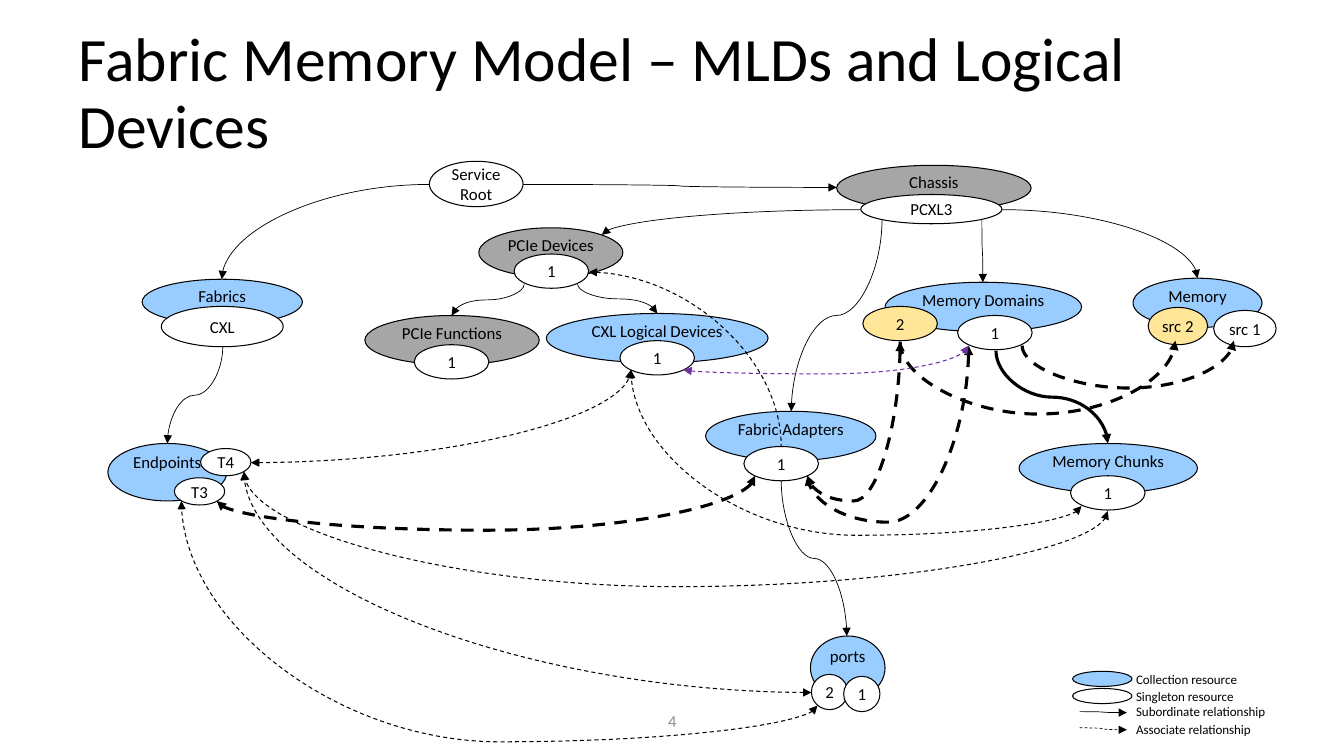
from dataclasses import dataclass
from enum import Enum
from typing import Optional

from lxml.etree import SubElement
from pptx import Presentation
from pptx.dml.color import RGBColor
from pptx.enum.dml import MSO_LINE as Dash
from pptx.enum.shapes import MSO_CONNECTOR as Link, MSO_SHAPE as Preset
from pptx.enum.text import MSO_ANCHOR as Anchor, MSO_AUTO_SIZE as Fit, PP_ALIGN as Align
from pptx.oxml.ns import qn
from pptx.util import Emu, Inches, Pt

CELL = Inches(0.1)


@dataclass(frozen=True)
class Theme:
    font: str = "Calibri"
    ink: str = "000000"
    muted: str = "8C8C8C"
    singleton: str = "FFFFFF"
    collection: str = "99CCFF"
    external: str = "A6A6A6"
    source: str = "FFE699"
    accent: str = "7030A0"
    title: float = 44
    label: float = 12
    legend: float = 9.3
    hair: float = 0.5
    thin: float = 0.75
    bold: float = 2.25


THEME = Theme()


class Route(Enum):
    ACROSS = 1
    DOWN = 2
    CORNER = 3


class Heads(Enum):
    START = ("headEnd",)
    END = ("tailEnd",)
    BOTH = ("headEnd", "tailEnd")


@dataclass(frozen=True)
class Node:
    text: str
    col: float
    row: float
    cols: float = 7.4
    rows: float = 3.4
    fill: str = THEME.singleton
    anchor: Anchor = Anchor.MIDDLE


@dataclass(frozen=True)
class Curve:
    start: tuple[float, float]
    end: tuple[float, float]
    route: Route = Route.DOWN
    bend: Optional[float] = None
    weight: float = THEME.hair
    dashed: bool = False
    heads: Heads = Heads.END
    colour: str = THEME.ink


def group(text: str, col: float, row: float, cols: float, rows: float = 4.9,
          fill: str = THEME.collection) -> Node:
    return Node(text, col, row, cols, rows, fill, Anchor.TOP)


def associate(start: tuple[float, float], end: tuple[float, float], bend: Optional[float] = None,
              weight: float = THEME.thin, heads: Heads = Heads.BOTH,
              route: Route = Route.DOWN, colour: str = THEME.ink) -> Curve:
    return Curve(start, end, route, bend, weight, True, heads, colour)


NODES = [
    Node("Service\nRoot", 42.6, 16, 9.3, 4.5),
    group("Fabrics", 14.1, 27.7, 15.9, 4.5),
    Node("CXL", 16, 30.4, 12.1, 4),
    group("Endpoints", 10.7, 44, 11.8, 5.7),
    Node("T3", 17.3, 47.4, 5, 2.7),
    Node("T4", 19.9, 44.5, 5, 2.7),
    group("Chassis", 83, 16.4, 19.3, 4.5, THEME.external),
    Node("PCXL3", 85.4, 19.3, 14, 2.9),
    group("Memory Chunks", 101.1, 44, 17.7),
    Node("1", 106.2, 47.2),
    group("Fabric Adapters", 70, 40.8, 16.9),
    Node("1", 73.8, 44.3),
    group("Memory Domains", 87.8, 28, 19.5),
    Node("1", 95, 31.3),
    Node("2", 85.6, 30.4, fill=THEME.source),
    group("Memory", 112.4, 27.6, 12.8),
    Node("src 1", 120.4, 30.8, 6.2, 3.6),
    Node("src 2", 113.9, 30.5, 5.9, 3.7, THEME.source),
    group("ports", 80.4, 63.1, 7.4, 6.3),
    Node("2", 80.5, 66.9, 3.6, 3.5),
    Node("1", 83.7, 67.1, 3.6, 3.5),
    group("PCIe Devices", 47.5, 22.6, 14.3, fill=THEME.external),
    Node("1", 51, 25.2),
    group("PCIe Functions", 36.2, 31.3, 17.3, fill=THEME.external),
    Node("1", 41.1, 34.2),
    group("CXL Logical Devices", 54.2, 31.1, 22),
    Node("1", 61.5, 33.8),
    Node("", 106.4, 66.6, 5.9, 1.5, THEME.collection),
    Node("", 106.4, 68.3, 5.9, 1.5),
]

CURVES = [
    Curve((22.1, 34.4), (16.6, 44)),
    Curve((51.9, 18.3), (83, 18.6), Route.ACROSS),
    Curve((42.6, 18.3), (22, 27.7), Route.CORNER),
    Curve((87.5, 21.8), (78.5, 40.8)),
    Curve((98.8, 34.8), (109.9, 44), weight=THEME.bold),
    Curve((99.4, 20.8), (118.8, 27.6), Route.CORNER),
    Curve((97.4, 21.8), (97.5, 28)),
    Curve((77.5, 47.7), (84, 63.1)),
    Curve((57.3, 28.2), (65.2, 31.1)),
    Curve((52, 28.2), (44.8, 31.3)),
    Curve((85.4, 20.8), (59.7, 23.3), Route.CORNER),
    associate((101.4, 34.3), (122.4, 33.8), 38.5, THEME.bold, Heads.END),
    associate((89.3, 33.9), (116.6, 33.8), 41.2, THEME.bold, Heads.END),
    associate((96.1, 34.3), (80.1, 47.2), 51.8, THEME.bold),
    associate((89.3, 33.9), (80.1, 47.2), 49.7, THEME.bold),
    associate((74.9, 47.2), (21.5, 49.7), 52.6, THEME.bold),
    associate((109.9, 50.7), (24.2, 46.8), 58.2),
    associate((81.1, 70), (18, 49.7), 73.6),
    associate((107.3, 50.2), (62.6, 36.7), 53.1),
    associate((67.8, 36.7), (96.1, 34.3), 37.1, colour=THEME.accent),
    associate((24.9, 45.9), (62.6, 36.7), route=Route.CORNER),
    associate((58.4, 27), (77.5, 44.3), route=Route.CORNER, heads=Heads.START),
    associate((80.5, 68.7), (24.2, 46.8), route=Route.CORNER),
    Curve((107.1, 70.6), (111.8, 70.7), Route.ACROSS),
    associate((107.1, 72.2), (111.8, 72.4), weight=THEME.hair, heads=Heads.END, route=Route.ACROSS),
]

LEGEND = [
    ("Collection resource", 66.6, 11.3),
    ("Singleton resource", 68.3, 11.3),
    ("Subordinate relationship", 69.8, 14.2),
    ("Associate relationship", 71.6, 12.9),
]


def grid(*cells: float) -> list[Emu]:
    return [Emu(round(cell * CELL)) for cell in cells]


def write(frame, text: str, *, size: float = THEME.label, colour: str = THEME.ink,
          align: Align = Align.CENTER, anchor: Anchor = Anchor.MIDDLE,
          inset: Optional[int] = 0, spacing: Optional[float] = None) -> None:
    frame.text = text
    frame.word_wrap = True
    frame.auto_size = Fit.NONE
    frame.vertical_anchor = anchor
    if inset is not None:
        frame.margin_left = frame.margin_right = frame.margin_top = frame.margin_bottom = inset
    for line in frame.paragraphs:
        line.alignment = align
        line.line_spacing = spacing
        for run in line.runs:
            run.font.name = THEME.font
            run.font.size = Pt(size)
            run.font.color.rgb = RGBColor.from_string(colour)


def draw_node(slide, node: Node) -> None:
    oval = slide.shapes.add_shape(Preset.OVAL, *grid(node.col, node.row, node.cols, node.rows))
    oval.shadow.inherit = False
    oval.fill.solid()
    oval.fill.fore_color.rgb = RGBColor.from_string(node.fill)
    oval.line.color.rgb = RGBColor.from_string(THEME.ink)
    oval.line.width = Pt(THEME.thin)
    if node.text:
        write(oval.text_frame, node.text, anchor=node.anchor)


def draw_curve(slide, curve: Curve) -> None:
    (x0, y0), (x1, y1) = curve.start, curve.end
    dx, dy = x1 - x0, y1 - y0
    if curve.route is Route.DOWN:
        turn, across, down = (270, -dy, dx) if dx > 0 and dy > 0 else (90, dy, -dx)
    elif curve.route is Route.CORNER and dx < 0:
        turn, across, down = 180, -dx, -dy
    else:
        turn, across, down = 0, dx, dy
    mid_x, mid_y = (x0 + x1) / 2, (y0 + y1) / 2
    arrow = slide.shapes.add_connector(Link.CURVE, *grid(
        mid_x - across / 2, mid_y - down / 2, mid_x + across / 2, mid_y + down / 2))
    arrow.line.color.rgb = RGBColor.from_string(curve.colour)
    arrow.line.width = Pt(curve.weight)
    if curve.dashed:
        arrow.line.dash_style = Dash.DASH
    properties = arrow._element.spPr
    properties.find(qn("a:xfrm")).set("rot", str(turn * 60000))
    geometry = properties.find(qn("a:prstGeom"))
    if curve.route is Route.CORNER:
        geometry.set("prst", "curvedConnector2")
    elif curve.bend is not None:
        share = round((curve.bend - y0) / dy * 100000)
        SubElement(geometry.find(qn("a:avLst")), qn("a:gd"), name="adj1", fmla=f"val {share}")
    for head in curve.heads.value:
        SubElement(properties.find(qn("a:ln")), qn(f"a:{head}"), type="triangle")
    SubElement(properties, qn("a:effectLst"))


def draw_legend(slide) -> None:
    for meaning, row, cols in LEGEND:
        caption = slide.shapes.add_textbox(*grid(112.7, row, cols, 1.6))
        write(caption.text_frame, meaning, size=THEME.legend, align=Align.LEFT, anchor=Anchor.TOP)


def main() -> None:
    deck = Presentation()
    deck.slide_width, deck.slide_height = grid(133.33, 75)
    slide = deck.slides.add_slide(deck.slide_layouts[5])
    heading = slide.shapes.title
    heading.left, heading.top, heading.width, heading.height = grid(6.8, 2.2, 120.1, 14.5)
    write(heading.text_frame, "Fabric Memory Model – MLDs and Logical Devices",
          size=THEME.title, align=Align.LEFT, inset=None, spacing=0.9)
    page = slide.shapes.add_textbox(*grid(44.2, 69.5, 45, 4))
    write(page.text_frame, "4", colour=THEME.muted)
    for node in NODES:
        draw_node(slide, node)
    for curve in CURVES:
        draw_curve(slide, curve)
    draw_legend(slide)
    deck.save("out.pptx")


if __name__ == "__main__":
    main()
